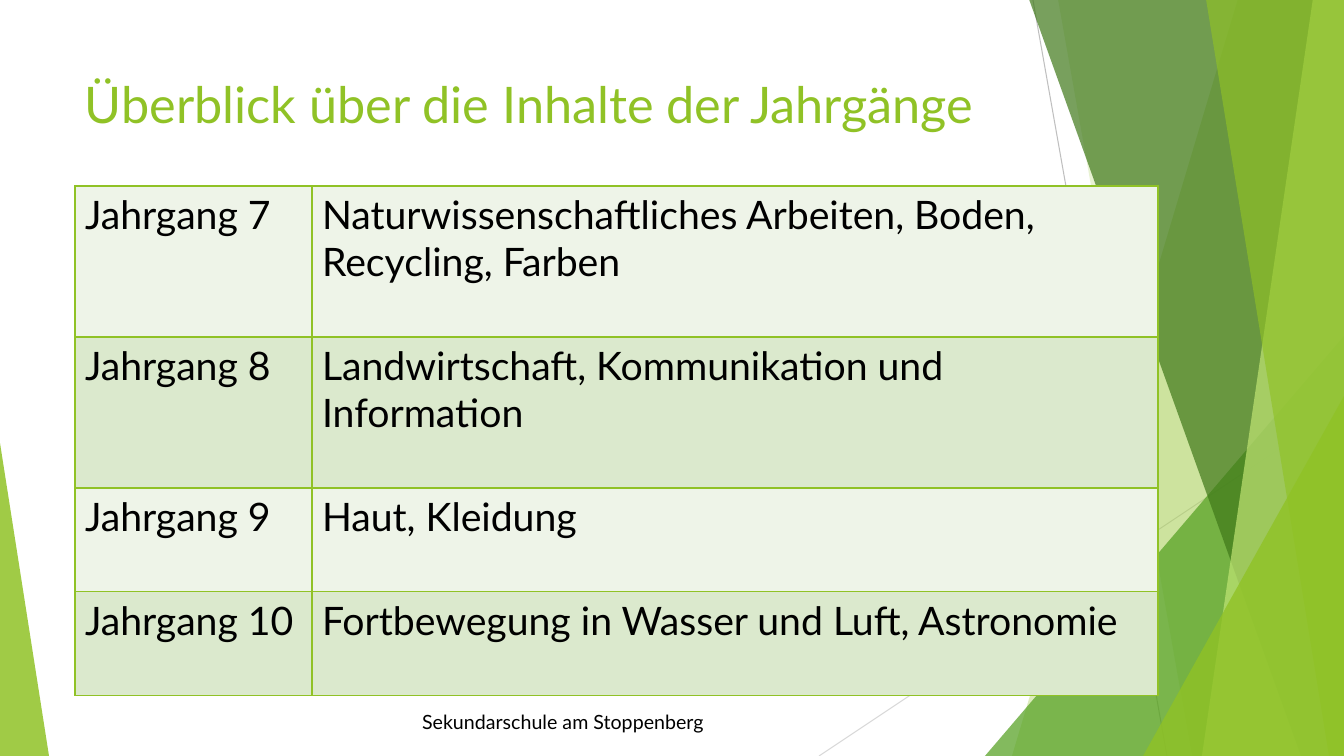
from lxml import etree
from pptx import Presentation
from pptx import util as u
from pptx.dml.color import RGBColor
from pptx.enum import shapes, text
from pptx.oxml.ns import qn

EMU_PER_PX = 914400 / 100.8
WIDTH, HEIGHT = 1344, 756
FONT = "Lato"
GREEN, LIGHT_GREEN, BLACK = "90C226", "C0E474", "000000"
MID_GREEN, DARK_GREEN = "54A021", "3F7819"
BANDS = ["EEF4E8", "DBE9CD"]
YEARS = [
    ("Jahrgang 7", "Naturwissenschaftliches Arbeiten, Boden, Recycling, Farben", 151),
    ("Jahrgang 8", "Landwirtschaft, Kommunikation und Information", 151),
    ("Jahrgang 9", "Haut, Kleidung", 104),
    ("Jahrgang 10", "Fortbewegung in Wasser und Luft, Astronomie", 104),
]


def px(length):
    return u.Emu(round(length * EMU_PER_PX))


def color(hex_string):
    return RGBColor.from_string(hex_string)


def style_paragraph(paragraph, size, hex_string):
    paragraph.font.name = FONT
    paragraph.font.size = u.Pt(size)
    paragraph.font.color.rgb = color(hex_string)


def style_facet(shape, hex_string, opacity):
    shape.shadow.inherit = False
    shape.line.fill.background()
    shape.fill.solid()
    shape.fill.fore_color.rgb = color(hex_string)
    value = shape.fill._xPr.find(qn("a:solidFill"))[0]
    etree.SubElement(value, qn("a:alpha"), val=str(opacity * 1000))


def add_ray(slide, start, end, hex_string):
    ray = slide.shapes.add_connector(
        shapes.MSO_CONNECTOR.STRAIGHT, *map(px, start + end))
    ray.line.color.rgb = color(hex_string)
    ray.line.width = u.Pt(0.75)
    etree.SubElement(ray._element.spPr, qn("a:effectLst"))


def add_shard(slide, top_left, bottom_left, hex_string, opacity):
    """Full-height facet that reaches the right edge of the slide."""
    builder = slide.shapes.build_freeform(top_left, -1, scale=EMU_PER_PX)
    builder.add_line_segments(
        [(WIDTH, -1), (WIDTH, HEIGHT), (bottom_left, HEIGHT)], close=True)
    style_facet(builder.convert_to_shape(), hex_string, opacity)


def add_corner(slide, left, width, height, apex, hex_string, opacity):
    """Right-angled triangle standing on the bottom edge."""
    triangle = slide.shapes.add_shape(
        shapes.MSO_SHAPE.ISOSCELES_TRIANGLE,
        *map(px, (left, HEIGHT - height, width, height)))
    triangle.adjustments[0] = apex
    style_facet(triangle, hex_string, opacity)


def add_decoration(slide):
    add_ray(slide, (1033, 0), (1167, HEIGHT), "BFBFBF")
    add_ray(slide, (WIDTH, 406), (819, HEIGHT), "D9D9D9")
    add_shard(slide, 1238, 1012, GREEN, 30)
    add_shard(slide, 1058, 1192, GREEN, 20)
    add_corner(slide, 985, 359, 420, 1, MID_GREEN, 72)
    add_shard(slide, 1029, 1301, DARK_GREEN, 70)
    add_shard(slide, 1313, 1202, LIGHT_GREEN, 70)
    add_shard(slide, 1206, 1329, GREEN, 65)
    add_corner(slide, 1143, 201, 360, 1, GREEN, 80)
    add_corner(slide, 0, 49, 313, 0, GREEN, 85)


def add_text(slide, box, words, size, hex_string, anchor, alignment):
    frame = slide.shapes.add_textbox(*map(px, box)).text_frame
    frame.word_wrap = True
    frame.vertical_anchor = anchor
    paragraph = frame.paragraphs[0]
    paragraph.text = words
    paragraph.alignment = alignment
    style_paragraph(paragraph, size, hex_string)


def style_cell(cell, words, fill):
    cell.text = words
    style_paragraph(cell.text_frame.paragraphs[0], 28, BLACK)
    properties = cell._tc.get_or_add_tcPr()
    for side in ("lnL", "lnR", "lnT", "lnB"):
        border = etree.SubElement(properties, qn("a:" + side), w=str(u.Pt(1)))
        solid = etree.SubElement(border, qn("a:solidFill"))
        etree.SubElement(solid, qn("a:srgbClr"), val=GREEN)
    cell.fill.solid()
    cell.fill.fore_color.rgb = color(fill)


def add_year_table(slide, left, top, width):
    label_width = 237
    height = sum(row_height for _, _, row_height in YEARS)
    table = slide.shapes.add_table(
        len(YEARS), 2, *map(px, (left, top, width, height))).table
    table.first_row = table.horz_banding = False
    table.columns[0].width = px(label_width)
    table.columns[1].width = px(width - label_width)
    for index, (year, topics, row_height) in enumerate(YEARS):
        table.rows[index].height = px(row_height)
        for column, words in enumerate((year, topics)):
            style_cell(table.cell(index, column), words, BANDS[index % 2])


def main():
    presentation = Presentation()
    presentation.slide_width = px(WIDTH)
    presentation.slide_height = px(HEIGHT)
    slide = presentation.slides.add_slide(presentation.slide_layouts[6])
    add_decoration(slide)
    # Title
    add_text(slide, (75, 68, 948, 145), "Überblick über die Inhalte der Jahrgänge",
             36, GREEN, text.MSO_ANCHOR.TOP, text.PP_ALIGN.LEFT)
    add_year_table(slide, 75, 186, 1083)
    # Footer
    add_text(slide, (403, 688, 320, 50), "Sekundarschule am Stoppenberg",
             14, BLACK, text.MSO_ANCHOR.BOTTOM, text.PP_ALIGN.CENTER)
    presentation.save("out.pptx")


if __name__ == "__main__":
    main()
